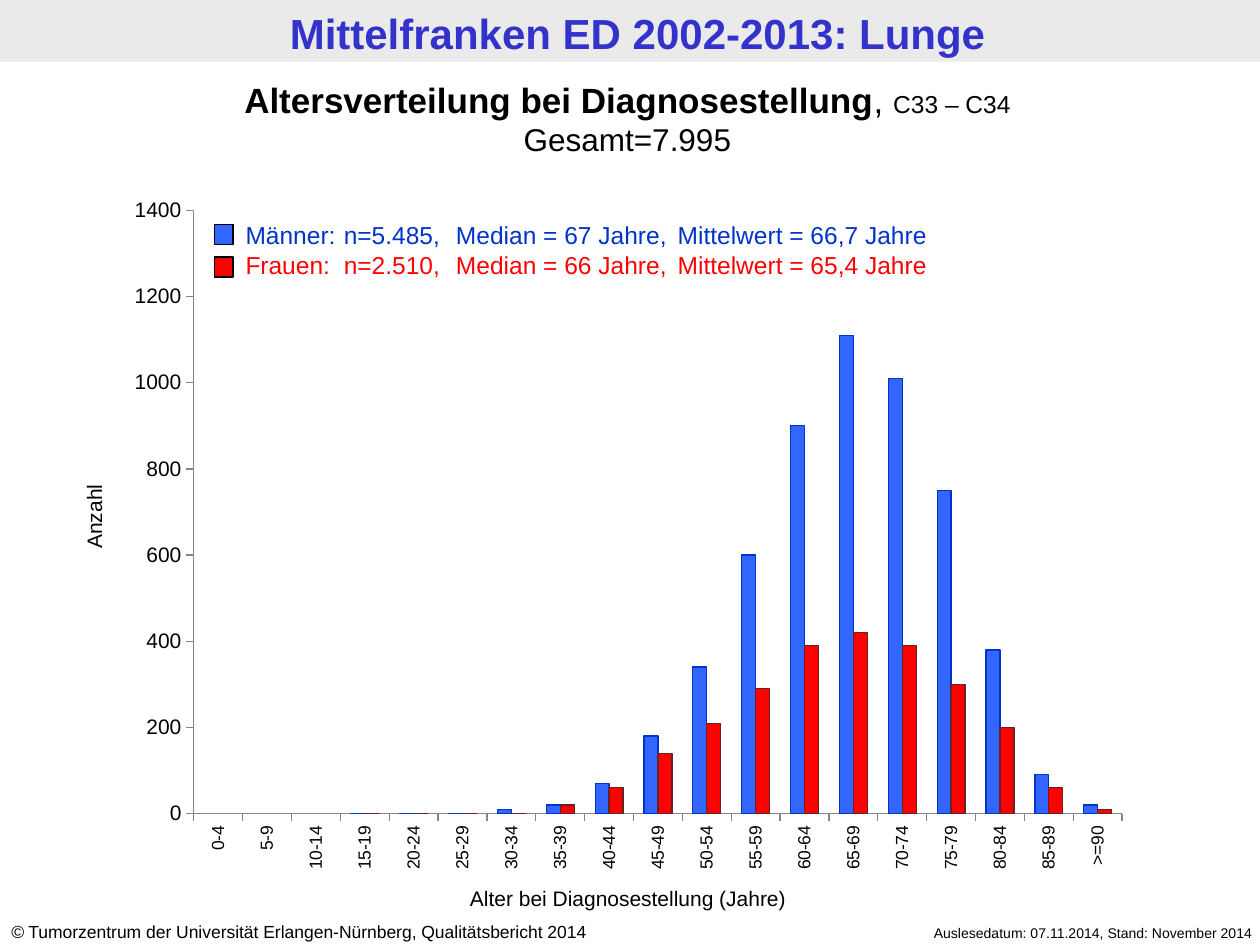
from lxml import etree
from pptx import Presentation
from pptx.chart.data import CategoryChartData as Data
from pptx.dml.color import RGBColor
from pptx.enum.chart import XL_CHART_TYPE as Kind, XL_TICK_MARK as Tick
from pptx.enum.shapes import MSO_SHAPE as Form
from pptx.enum.text import MSO_ANCHOR as Anchor, MSO_AUTO_SIZE as Fit, PP_ALIGN as Align
from pptx.oxml import parse_xml
from pptx.oxml.ns import nsdecls, qn
from pptx.util import Inches, Pt

BLUE, RED, BLACK = "3366FF", "FF0000", "000000"
NAVY = "0033CC"
AGES = [f"{n}-{n + 4}" for n in range(0, 90, 5)] + [">=90"]
MEN = [None, None, None, 0, 0, 0, 10, 20, 70, 180, 340, 600, 900, 1110, 1010, 750, 380, 90, 20]
WOMEN = [None, None, None, 0, 0, 0, 0, 20, 60, 140, 210, 290, 390, 420, 390, 300, 200, 60, 10]


def tint(code):
    return RGBColor.from_string(code)


def style(font, size, color=BLACK, bold=False, slant=False):
    font.name, font.size = "Arial", Pt(size)
    font.bold, font.italic = bold, slant
    font.color.rgb = tint(color)


def place(shape, box):
    shape.left, shape.top, shape.width, shape.height = (Inches(v) for v in box)


def write(frame, lines, size, align=Align.LEFT, tabs=(), **base):
    frame.word_wrap = True
    frame.auto_size = Fit.NONE
    frame.vertical_anchor = Anchor.TOP
    for i, line in enumerate(lines):
        para = frame.add_paragraph() if i else frame.paragraphs[0]
        para.alignment = align
        if tabs:
            stops = etree.SubElement(para._p.get_or_add_pPr(), qn("a:tabLst"))
            for pos in tabs:
                etree.SubElement(stops, qn("a:tab"), pos=str(Inches(pos)), algn="l")
        for text, look in line:
            run = para.add_run()
            run.text = text
            style(run.font, **{"size": size, **base, **look})


def label(slide, box, lines, size, **look):
    shape = slide.shapes.add_textbox(*(Inches(v) for v in box))
    write(shape.text_frame, lines, size, **look)
    return shape


def block(slide, box, fill, edge=None):
    shape = slide.shapes.add_shape(Form.RECTANGLE, *(Inches(v) for v in box))
    shape.shadow.inherit = False
    shape.fill.solid()
    shape.fill.fore_color.rgb = tint(fill)
    if edge:
        shape.line.color.rgb = tint(edge)
        shape.line.width = Pt(0.75)
    else:
        shape.line.fill.background()


def banner(slide, box):
    x, y, w, h = box
    block(slide, box, "EAEAEA")
    label(slide, (x + 0.06, y + 0.01, w, h), [[("Mittelfranken ED 2002-2013: Lunge", {})]],
          24, align=Align.CENTER, color="3333CC", bold=True)


def heading(slide, box):
    title = slide.shapes.title
    place(title, box)
    write(title.text_frame, [
        [("Altersverteilung bei Diagnosestellung", {"bold": True}), (", ", {}),
         ("C33 – C34", {"size": 14})],
        [("Gesamt=7.995", {"size": 18})],
    ], 20, align=Align.CENTER)


def graph(slide, box):
    data = Data()
    data.categories = AGES
    data.add_series("Männer", MEN)
    data.add_series("Frauen", WOMEN)
    chart = slide.shapes.add_chart(
        Kind.COLUMN_CLUSTERED, *(Inches(v) for v in box), data).chart
    chart.has_legend = chart.has_title = False
    style(chart.font, 12)
    plot = chart.plots[0]
    plot.gap_width, plot.overlap, plot.vary_by_categories = 150, 0, False
    for bars, fill, edge in zip(plot.series, (BLUE, RED), (NAVY, "632523")):
        bars.format.fill.solid()
        bars.format.fill.fore_color.rgb = tint(fill)
        bars.format.line.color.rgb = tint(edge)
        bars.format.line.width = Pt(0.75)
    for axis, size in ((chart.category_axis, 10), (chart.value_axis, 12)):
        axis.has_major_gridlines = False
        axis.major_tick_mark, axis.minor_tick_mark = Tick.OUTSIDE, Tick.NONE
        axis.format.line.color.rgb = tint("868686")
        style(axis.tick_labels.font, size)
    scale = chart.value_axis
    scale.minimum_scale, scale.maximum_scale, scale.major_unit = 0, 1400, 200
    turn = chart.category_axis._element.find(qn("c:txPr")).find(qn("a:bodyPr"))
    turn.set("rot", "-5400000")
    turn.set("vert", "horz")
    area = chart._chartSpace.chart.plotArea
    for old in area.findall(qn("c:layout")):
        area.remove(old)
    rules = "".join(f'<c:{tag} val="{val}"/>' for tag, val in (
        ("layoutTarget", "inner"), ("xMode", "edge"), ("yMode", "edge"),
        ("x", 0.077), ("y", 0.036), ("w", 0.903), ("h", 0.863)))
    area.insert(0, parse_xml(
        f'<c:layout {nsdecls("c")}><c:manualLayout>{rules}</c:manualLayout></c:layout>'))


def legend(slide, box):
    x, y, w, h = box
    label(slide, (x + 0.15, y, w - 0.15, h), [
        [("Männer: \tn=5.485, \tMedian = 67 Jahre, \tMittelwert = 66,7 Jahre", {"color": NAVY})],
        [("Frauen: \tn=2.510, \tMedian = 66 Jahre,\tMittelwert = 65,4 Jahre", {"color": RED})],
    ], 14, tabs=(0.78, 0.88, 1.67, 3.43))
    for i, fill in enumerate((BLUE, RED)):
        block(slide, (x, y + 0.08 + 0.26 * i, 0.15, 0.16), fill, BLACK)


def names(slide, box):
    x, y, w, h = box
    label(slide, (x + 2.54, y + h - 0.04, 3.07, 0.3),
          [[("Alter bei Diagnosestellung (Jahre)", {})]], 12, align=Align.CENTER)
    side = label(slide, (x - 1.47, y + 2.48, 2.61, 0.3),
                 [[("Anzahl", {})]], 12, align=Align.CENTER)
    side.rotation = 270


def footer(slide, box):
    x, y, w, h = box
    label(slide, (x - 0.01, y, 5.24, h), [[
        ("©", {"slant": True}),
        (" Tumorzentrum der Universität Erlangen-Nürnberg, Qualitätsbericht 2014", {})]], 10)
    label(slide, (x + w - 3.35, y + 0.03, 3.39, h - 0.03),
          [[("Auslesedatum: 07.11.2014, Stand: November 2014", {})]], 8, align=Align.RIGHT)


def main():
    deck = Presentation()
    deck.slide_width, deck.slide_height = Inches(10), Inches(7.5)
    slide = deck.slides.add_slide(deck.slide_layouts[5])
    field = (0.91, 1.47, 8.16, 5.55)
    banner(slide, (0, 0, 10, 0.49))
    heading(slide, (-0.04, 0.57, 10.04, 0.74))
    graph(slide, field)
    legend(slide, (1.7, 1.7, 7, 0.57))
    names(slide, field)
    footer(slide, (0, 7.26, 10, 0.27))
    deck.save("out.pptx")


if __name__ == "__main__":
    main()
